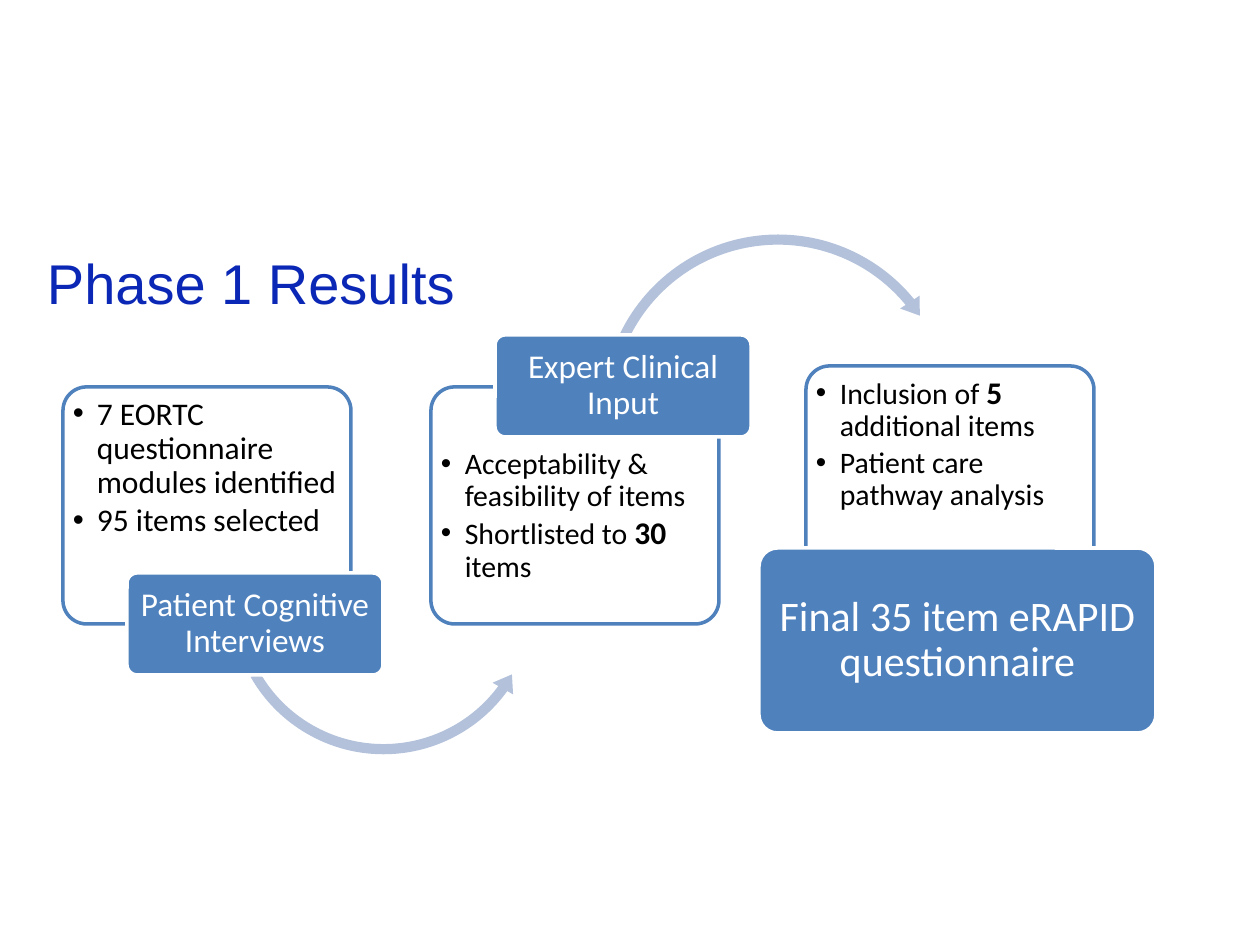
from lxml.etree import SubElement
from pptx import Presentation
from pptx.dml.color import RGBColor
from pptx.enum.shapes import MSO_SHAPE
from pptx.enum.text import MSO_ANCHOR, PP_ALIGN
from pptx.oxml.ns import qn
from pptx.util import Emu, Pt

COLORS = {
    "title": "0B27B5",
    "blue": "4F81BD",
    "arrow": "B3C1DB",
    "white": "FFFFFF",
    "text": "000000",
}
SCALE = 914400 / 126  # EMU per px
CARD = (288, 237)
INDENT = 24


def px(n):
    return Emu(round(n * SCALE))


def rgb(name):
    return RGBColor.from_string(COLORS[name])


class Deck:
    def __init__(self, width, height):
        self.prs = Presentation()
        self.prs.slide_width, self.prs.slide_height = px(width), px(height)
        self.slide = self.prs.slides.add_slide(self.prs.slide_layouts[6])

    def shape(self, kind, box, fill, line=None):
        item = self.slide.shapes.add_shape(kind, *map(px, box))
        item.shadow.inherit = False
        item.fill.solid()
        item.fill.fore_color.rgb = rgb(fill)
        if line:
            item.line.color.rgb = rgb(line)
            item.line.width = Pt(2)
        else:
            item.line.fill.background()
        return item

    def frame(self, item, anchor, insets):
        frame = item.text_frame
        frame.word_wrap = True
        frame.vertical_anchor = anchor
        (frame.margin_left, frame.margin_top,
         frame.margin_right, frame.margin_bottom) = map(px, insets)
        return frame

    def font(self, para, size, color, name="Calibri"):
        para.font.name = name
        para.font.size = Pt(size)
        para.font.color.rgb = rgb(color)

    def title(self, box, text):
        item = self.slide.shapes.add_textbox(*map(px, box))
        para = self.frame(item, MSO_ANCHOR.BOTTOM, (13, 6, 13, 6)).paragraphs[0]
        para.text = text
        self.font(para, 32, "title", "Arial")

    def card(self, left, top, items, size, inset=4):
        """Outlined card; each item is a list of (text, bold) runs."""
        item = self.shape(MSO_SHAPE.ROUNDED_RECTANGLE, (left, top, *CARD), "white", "blue")
        item.adjustments[0] = 0.1
        tint = item.fill._xPr.find(qn("a:solidFill"))[0]
        SubElement(tint, qn("a:alpha"), val="90000")
        frame = self.frame(item, MSO_ANCHOR.TOP, (3, inset, 3, 4))
        for i, runs in enumerate(items):
            para = frame.add_paragraph() if i else frame.paragraphs[0]
            para.level = 1
            para.alignment = PP_ALIGN.LEFT
            para.line_spacing = 0.9
            para.space_after = Pt(2.5)
            props = para._p.get_or_add_pPr()
            props.set("marL", str(px(INDENT)))
            props.set("indent", str(px(-INDENT)))
            SubElement(props, qn("a:buFont"), typeface="Arial")
            SubElement(props, qn("a:buChar"), char="•")
            self.font(para, size, "text")
            for text, bold in runs:
                run = para.add_run()
                run.text = text
                if bold:
                    run.font.bold = True
                    run.font.size = Pt(18)

    def label(self, box, text, size):
        item = self.shape(MSO_SHAPE.ROUNDED_RECTANGLE, box, "blue", "white")
        item.adjustments[0] = 0.1
        para = self.frame(item, MSO_ANCHOR.MIDDLE, (5, 4, 5, 4)).paragraphs[0]
        para.text = text
        para.alignment = PP_ALIGN.CENTER
        para.line_spacing = 0.9
        self.font(para, size, "white")

    def arrow(self, kind, box, thick, angles, head):
        """Curved arrow: thickness and head in percent, angles in degrees."""
        item = self.shape(kind, box, "arrow")
        values = [thick / 100, *(a * 0.6 for a in angles), head / 100]
        for i, value in enumerate(values):
            item.adjustments[i] = value


def main():
    deck = Deck(1260, 945)
    deck.title((34, 165, 1191, 157), "Phase 1 Results")

    # Step 1: interviews
    deck.card(63, 387, [
        [("7 EORTC questionnaire modules identified", False)],
        [("95 items selected", False)],
    ], 18)
    deck.arrow(MSO_SHAPE.LEFT_CIRCULAR_ARROW, (224, 442, 319, 319),
               3.2, (6.53, 36.12, 150.41), 3.7)
    deck.label((127, 573, 256, 102), "Patient Cognitive Interviews", 19)

    # Step 2: clinical input
    deck.card(431, 387, [
        [("Acceptability & feasibility of items", False)],
        [("Shortlisted to ", False), ("30", True), (" items", False)],
    ], 17, inset=55)
    deck.arrow(MSO_SHAPE.CIRCULAR_ARROW, (596, 228, 364, 364),
               2.8, (5.66, 320.74, 205.59), 3.2)
    deck.label((495, 335, 256, 102), "Expert Clinical Input", 19)

    # Step 3: final questionnaire
    deck.card(806, 366, [
        [("Inclusion of ", False), ("5 ", True), ("additional items", False)],
        [("Patient care pathway analysis", False)],
    ], 17)
    deck.label((759, 548, 397, 185), "Final 35 item eRAPID questionnaire", 24)

    deck.prs.save("out.pptx")


if __name__ == "__main__":
    main()
